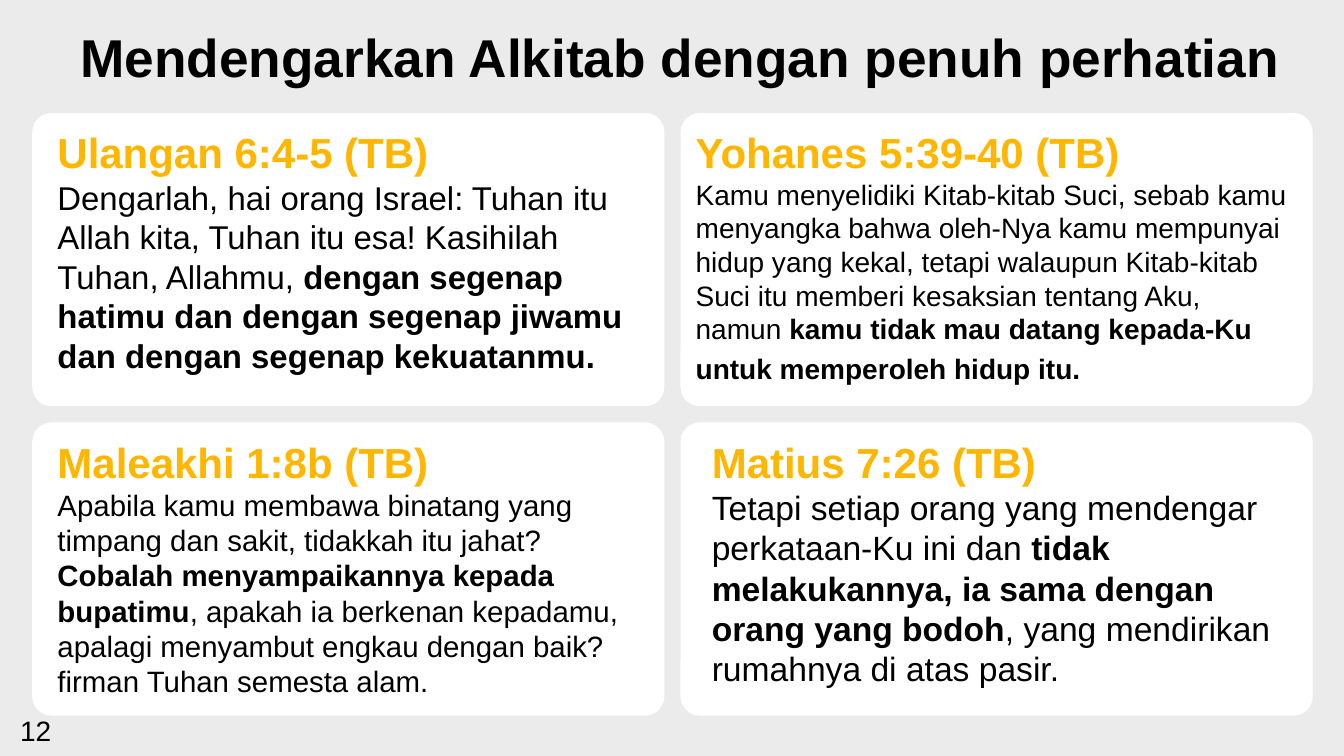
from pptx import Presentation
from pptx.dml.color import RGBColor
from pptx.enum.shapes import MSO_SHAPE
from pptx.enum.text import PP_ALIGN
from pptx.util import Inches, Pt

BACKGROUND = RGBColor(0xEB, 0xEB, 0xEB)
WHITE = RGBColor(0xFF, 0xFF, 0xFF)
BLACK = RGBColor(0x00, 0x00, 0x00)
GOLD = RGBColor(0xFF, 0xB6, 0x00)
FONT = "Arial"

TITLE = "Mendengarkan Alkitab dengan penuh perhatian"
PAGE_NUMBER = "12"

# column, row, text inset, text width, heading, [(text, size, bold)]
VERSES = [
    (0, 0, 0.25, 5.86, "Ulangan 6:4-5 (TB)", [
        ("Dengarlah, hai orang Israel: Tuhan itu Allah kita, Tuhan itu esa! "
         "Kasihilah Tuhan, Allahmu, ", 23.5, False),
        ("dengan segenap hatimu dan dengan segenap jiwamu "
         "dan dengan segenap kekuatanmu.", 23.5, True),
    ]),
    (0, 1, 0.25, 5.75, "Maleakhi 1:8b (TB)", [
        ("Apabila kamu membawa binatang yang timpang dan sakit, "
         "tidakkah itu jahat? \n", 21, False),
        ("Cobalah menyampaikannya kepada bupatimu", 21, True),
        (", apakah ia berkenan kepadamu, apalagi menyambut engkau dengan baik? "
         "firman Tuhan semesta alam.", 21, False),
    ]),
    (1, 0, 0.15, 6, "Yohanes 5:39-40 (TB)", [
        ("Kamu menyelidiki Kitab-kitab Suci, sebab kamu menyangka bahwa oleh-Nya "
         "kamu mempunyai hidup yang kekal, tetapi walaupun Kitab-kitab Suci itu "
         "memberi kesaksian tentang Aku, \nnamun ", 20, False),
        ("kamu tidak mau datang kepada-Ku untuk memperoleh hidup itu.", 20, True),
        (" ", 24, False),
    ]),
    (1, 1, 0.31, 5.68, "Matius 7:26 (TB)", [
        ("Tetapi setiap orang yang mendengar perkataan-Ku ini dan ", 24, False),
        ("tidak melakukannya, ia sama dengan orang yang bodoh", 24, True),
        (", yang mendirikan rumahnya di atas pasir.", 24, False),
    ]),
]

CARD_LEFT, CARD_TOP = 0.32, 1.12
CARD_WIDTH, CARD_HEIGHT = 6.27, 2.91
GAP = 0.16
TEXT_DROP = 0.14


def add_run(paragraph, text, size, color, bold):
    for index, line in enumerate(text.split("\n")):
        if index:
            paragraph.add_line_break()
        if line:
            run = paragraph.add_run()
            run.text = line
            run.font.name = FONT
            run.font.size = Pt(size)
            run.font.bold = bold
            run.font.color.rgb = color


def add_text(slide, left, top, width, height, paragraphs, alignment=PP_ALIGN.LEFT):
    box = slide.shapes.add_textbox(*map(Inches, (left, top, width, height)))
    frame = box.text_frame
    frame.word_wrap = True
    frame.margin_left = frame.margin_top = frame.margin_right = frame.margin_bottom = 0
    for index, runs in enumerate(paragraphs):
        paragraph = frame.add_paragraph() if index else frame.paragraphs[0]
        paragraph.alignment = alignment
        for run in runs:
            add_run(paragraph, *run)


def add_card(slide, left, top):
    card = slide.shapes.add_shape(
        MSO_SHAPE.ROUNDED_RECTANGLE,
        *map(Inches, (left, top, CARD_WIDTH, CARD_HEIGHT)))
    card.adjustments[0] = 0.066
    card.shadow.inherit = False
    card.fill.solid()
    card.fill.fore_color.rgb = WHITE
    card.line.fill.background()


def main():
    presentation = Presentation()
    presentation.slide_width = Inches(13.33)
    presentation.slide_height = Inches(7.5)
    slide = presentation.slides.add_slide(presentation.slide_layouts[6])
    slide.background.fill.solid()
    slide.background.fill.fore_color.rgb = BACKGROUND

    add_text(slide, 0.2, 7.08, 1.11, 0.34, [[(PAGE_NUMBER, 20, BLACK, False)]])
    add_text(slide, 0, 0.24, 13.49, 0.64, [[(TITLE, 38, BLACK, True)]], PP_ALIGN.CENTER)

    for column, row, inset, width, heading, verse in VERSES:
        left = CARD_LEFT + column * (CARD_WIDTH + GAP)
        top = CARD_TOP + row * (CARD_HEIGHT + GAP)
        add_card(slide, left, top)
        body = [(text, size, BLACK, bold) for text, size, bold in verse]
        add_text(slide, left + inset, top + TEXT_DROP, width, 2.6,
                 [[(heading, 30, GOLD, True)], body])

    presentation.save("out.pptx")


if __name__ == "__main__":
    main()
